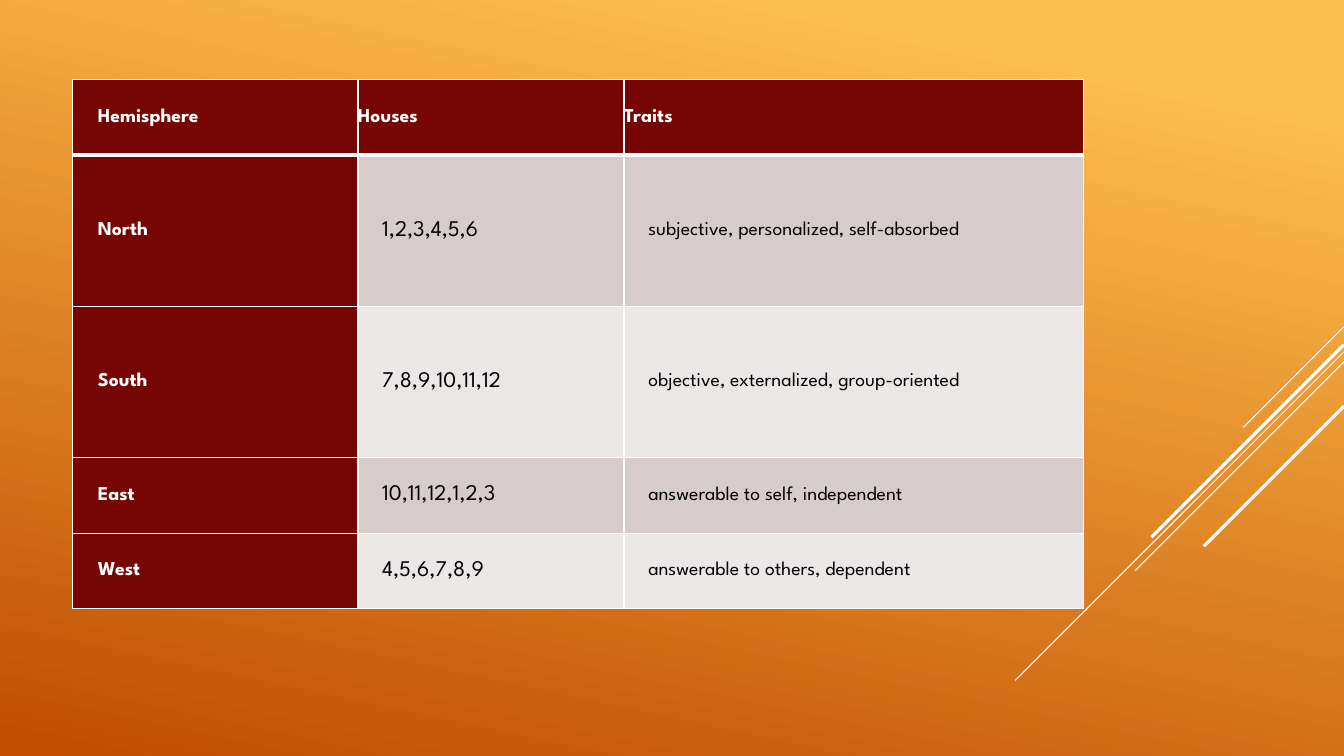
"""Build the slide with the table of hemispheres, houses and traits."""
import pptx
import pptx.dml.color
import pptx.enum.text
import pptx.oxml
import pptx.oxml.ns
import pptx.util
import lxml.etree

Inches = pptx.util.Inches
COLORS = {
    "glow": "FFBF50",
    "ember": "C04D00",
    "maroon": "760603",
    "band_dark": "D6CCCC",
    "band_light": "ECE7E7",
    "white": "FFFFFF",
    "black": "000000",
}
FONT = "League Spartan"
SLIDE_WIDTH, SLIDE_HEIGHT = 13.33, 7.5
TABLE_LEFT, TABLE_TOP = 0.72, 0.79
COLUMN_WIDTHS = [2.83, 2.64, 4.56]
ROW_UNIT = 0.75
ROW_UNITS = [1, 2, 2, 1, 1]
ROWS = [
    ["Hemisphere", "Houses", "Traits"],
    ["North", "1,2,3,4,5,6", "subjective, personalized, self-absorbed"],
    ["South", "7,8,9,10,11,12", "objective, externalized, group-oriented"],
    ["East", "10,11,12,1,2,3", "answerable to self, independent"],
    ["West", "4,5,6,7,8,9", "answerable to others, dependent"],
]
DIAGONALS = [
    (3.24, 1.0, 0.75),
    (3.49, 3.26, 0.75),
    (3.59, 2.07, 0.75),
    (3.42, 1.91, 2.25),
    (4.03, 1.39, 2.25),
]


def rgb(name):
    return pptx.dml.color.RGBColor.from_string(COLORS[name])


def write_cell(cell, text, size=14, color="black", bold=False, indent=0.0):
    cell.margin_top = cell.margin_right = cell.margin_bottom = 0
    cell.margin_left = Inches(indent)
    cell.vertical_anchor = pptx.enum.text.MSO_ANCHOR.MIDDLE
    run = cell.text_frame.paragraphs[0].add_run()
    run.text = text
    run.font.name = FONT
    run.font.size = pptx.util.Pt(size)
    run.font.bold = bold
    run.font.color.rgb = rgb(color)


presentation = pptx.Presentation()
presentation.slide_width = Inches(SLIDE_WIDTH)
presentation.slide_height = Inches(SLIDE_HEIGHT)
slide = presentation.slides.add_slide(presentation.slide_layouts[6])

background = slide.background.fill
background.gradient()
background.gradient_angle = 360 - 102
for stop, position, color in zip(background.gradient_stops, (0.1, 1), ("glow", "ember")):
    stop.position = position
    stop.color.rgb = rgb(color)

for top, reach, weight in DIAGONALS:
    diagonal = slide.shapes.add_connector(
        pptx.enum.shapes.MSO_CONNECTOR.STRAIGHT,
        Inches(SLIDE_WIDTH), Inches(top),
        Inches(SLIDE_WIDTH - reach), Inches(top + reach),
    )
    diagonal.line.color.rgb = rgb("white")
    diagonal.line.width = pptx.util.Pt(weight)
    lxml.etree.SubElement(diagonal.element.spPr, pptx.oxml.ns.qn("a:effectLst"))

table = slide.shapes.add_table(
    len(ROWS), len(COLUMN_WIDTHS),
    Inches(TABLE_LEFT), Inches(TABLE_TOP),
    Inches(sum(COLUMN_WIDTHS)), Inches(ROW_UNIT * sum(ROW_UNITS)),
).table
for column, width in zip(table.columns, COLUMN_WIDTHS):
    column.width = Inches(width)
for row, units in zip(table.rows, ROW_UNITS):
    row.height = Inches(ROW_UNIT * units)

for row_index, texts in enumerate(ROWS):
    for column_index, text in enumerate(texts):
        cell = table.cell(row_index, column_index)
        is_header = row_index == 0
        is_label = is_header or column_index == 0
        write_cell(
            cell, text,
            size=16 if column_index == 1 and not is_header else 14,
            color="white" if is_label else "black",
            bold=is_label,
            indent=0 if is_header and column_index else 0.25 if column_index == 0 else 0.24,
        )
        border_weights = {
            "L": 1,
            "R": 1,
            "T": 3 if row_index == 1 else 1,
            "B": 3 if is_header else 1,
        }
        properties = cell._tc.get_or_add_tcPr()
        for side, weight in border_weights.items():
            properties.append(pptx.oxml.parse_xml(
                f'<a:ln{side} {pptx.oxml.ns.nsdecls("a")} w="{pptx.util.Pt(weight)}">'
                f'<a:solidFill><a:srgbClr val="{COLORS["white"]}"/></a:solidFill></a:ln{side}>'
            ))
        band = "band_dark" if row_index % 2 else "band_light"
        cell.fill.solid()
        cell.fill.fore_color.rgb = rgb("maroon" if is_label else band)

presentation.save("out.pptx")
